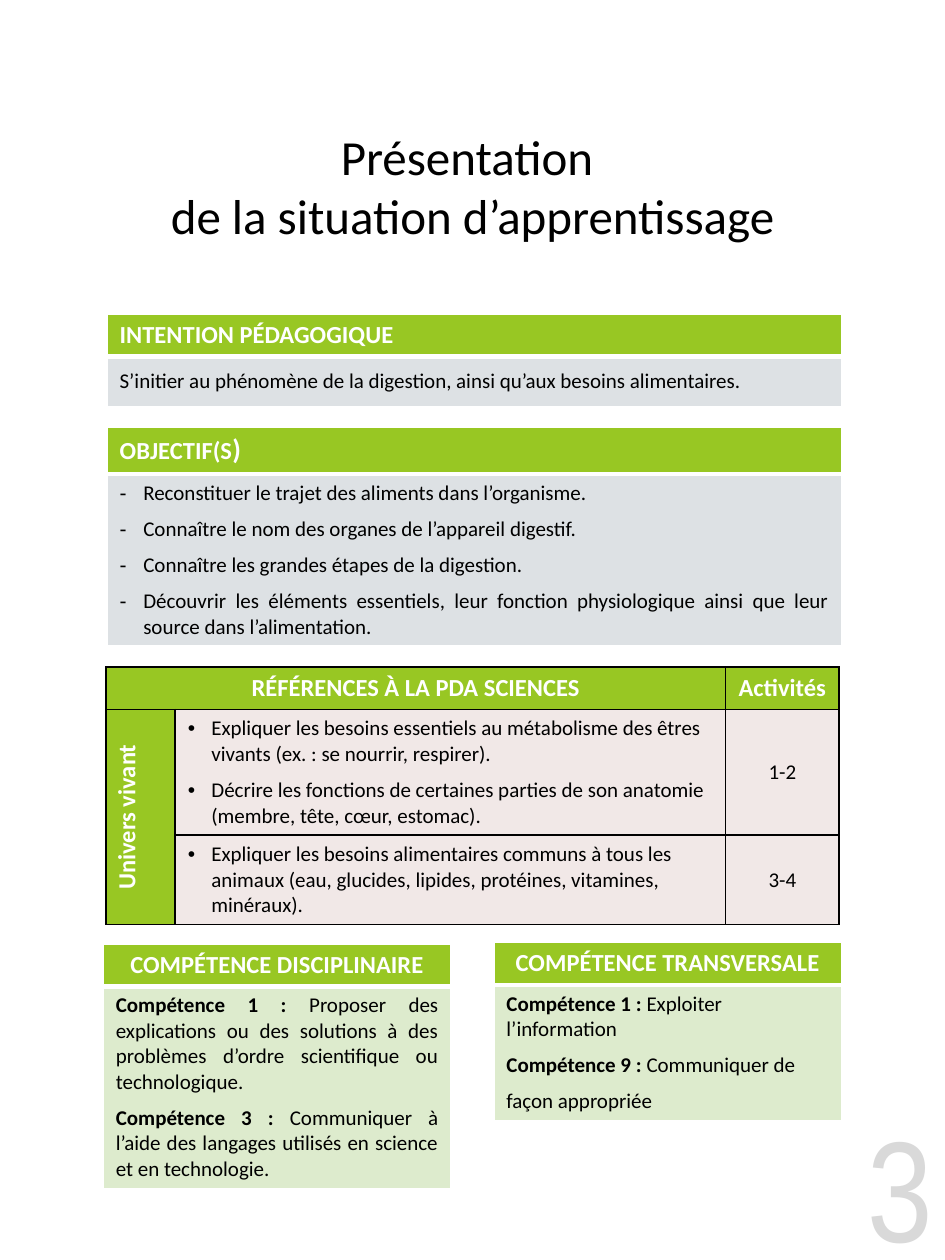
from dataclasses import dataclass

from lxml import etree
from pptx import Presentation
from pptx.dml.color import RGBColor
from pptx.enum.text import MSO_ANCHOR, MSO_AUTO_SIZE, PP_ALIGN
from pptx.oxml.ns import qn
from pptx.util import Pt

LEFT, CENTER, RIGHT, JUSTIFY = PP_ALIGN.LEFT, PP_ALIGN.CENTER, PP_ALIGN.RIGHT, PP_ALIGN.JUSTIFY
TOP, MIDDLE = MSO_ANCHOR.TOP, MSO_ANCHOR.MIDDLE
FONT = "Calibri"
BLACK, WHITE, GREEN = "000000", "FFFFFF", "98C723"
GRAY, PINK, PALE_GREEN, NUMBER_GRAY = "DDE1E4", "F1E8E7", "DDEBCD", "D9D9D9"
HANGING = 13.5


@dataclass
class Span:
    text: str
    size: float = 12
    bold: bool = False
    color: str = BLACK
    font: str = FONT


@dataclass
class Para:
    spans: list[Span]
    align: PP_ALIGN = LEFT
    bullet: str = ""
    before: float = 0
    after: float = 0


@dataclass
class Panel:
    """A heading row over a body row."""
    left: float
    top: float
    width: float
    heights: tuple[float, float]
    heading: Para
    body: list[Para]
    fill: str
    anchor: MSO_ANCHOR = TOP


def rgb(color: str) -> RGBColor:
    return RGBColor.from_string(color)


def heading(text: str, align: PP_ALIGN = LEFT, after: float = 0) -> Para:
    return Para([Span(text, 14, True, WHITE)], align, after=after)


def plain(text: str, align: PP_ALIGN = LEFT, after: float = 0) -> Para:
    return Para([Span(text)], align, after=after)


def bullets(mark: str, align: PP_ALIGN, texts: list[str]) -> list[Para]:
    return [Para([Span(text)], align, mark, 6 if index else 0)
            for index, text in enumerate(texts)]


def skill(number: int, text: str, align: PP_ALIGN) -> Para:
    return Para([Span(f"Compétence {number} : ", bold=True), Span(text)], align, after=6)


def write(frame, paras: list[Para]) -> None:
    for index, item in enumerate(paras):
        para = frame.paragraphs[0] if index == 0 else frame.add_paragraph()
        para.alignment = item.align
        para.space_before, para.space_after = Pt(item.before), Pt(item.after)
        if item.bullet:
            props = para._p.get_or_add_pPr()
            props.set("marL", str(Pt(HANGING)))
            props.set("indent", str(-Pt(HANGING)))
            etree.SubElement(props, qn("a:buFont"), typeface="Arial")
            etree.SubElement(props, qn("a:buChar"), char=item.bullet)
        for span in item.spans:
            run = para.add_run()
            run.text = span.text
            run.font.name, run.font.size, run.font.bold = span.font, Pt(span.size), span.bold
            run.font.color.rgb = rgb(span.color)


def set_borders(cell, color: str, bottom: float = 1) -> None:
    props = cell._tc.get_or_add_tcPr()
    for side, width in (("L", 1), ("R", 1), ("T", 1), ("B", bottom)):
        line = etree.SubElement(props, qn(f"a:ln{side}"), w=str(Pt(width)))
        fill = etree.SubElement(line, qn("a:solidFill"))
        etree.SubElement(fill, qn("a:srgbClr"), val=color)


def fill_cell(cell, paras: list[Para], color: str, anchor: MSO_ANCHOR) -> None:
    cell.fill.solid()
    cell.fill.fore_color.rgb = rgb(color)
    cell.vertical_anchor = anchor
    write(cell.text_frame, paras)


def add_grid(page, left: float, top: float, widths: list[float], heights: list[float]):
    table = page.shapes.add_table(len(heights), len(widths), Pt(left), Pt(top),
                                  Pt(sum(widths)), Pt(sum(heights))).table
    table.first_row = table.horz_banding = False
    for column, width in zip(table.columns, widths):
        column.width = Pt(width)
    for row, height in zip(table.rows, heights):
        row.height = Pt(height)
    return table


def add_panel(page, panel: Panel) -> None:
    table = add_grid(page, panel.left, panel.top, [panel.width], list(panel.heights))
    head, body = table.cell(0, 0), table.cell(1, 0)
    set_borders(head, WHITE, bottom=3)
    set_borders(body, WHITE)
    fill_cell(head, [panel.heading], GREEN, panel.anchor)
    fill_cell(body, panel.body, panel.fill, panel.anchor)


def add_references(page) -> None:
    table = add_grid(page, 60.5, 381, [39.6, 314.6, 64.8], [24.5, 71.2, 50.4])
    for cell in table.iter_cells():
        set_borders(cell, BLACK)
    table.cell(0, 0).merge(table.cell(0, 1))
    table.cell(1, 0).merge(table.cell(2, 0))
    fill_cell(table.cell(0, 0), [heading("RÉFÉRENCES À LA PDA SCIENCES", CENTER)], GREEN, MIDDLE)
    fill_cell(table.cell(0, 2), [heading("Activités", CENTER)], GREEN, MIDDLE)
    fill_cell(table.cell(1, 0), [heading("Univers vivant", CENTER)], GREEN, MIDDLE)
    table.cell(1, 0)._tc.get_or_add_tcPr().set("vert", "vert270")
    rows = [
        (["Expliquer les besoins essentiels au métabolisme des êtres vivants "
          "(ex. : se nourrir, respirer).",
          "Décrire les fonctions de certaines parties de son anatomie "
          "(membre, tête, cœur, estomac)."], "1-2"),
        (["Expliquer les besoins alimentaires communs à tous les animaux "
          "(eau, glucides, lipides, protéines, vitamines, minéraux)."], "3-4"),
    ]
    for row, (texts, activities) in enumerate(rows, start=1):
        fill_cell(table.cell(row, 1), bullets("•", LEFT, texts), PINK, TOP)
        fill_cell(table.cell(row, 2), [plain(activities, CENTER)], PINK, MIDDLE)


PANELS = [
    Panel(61.2, 179.3, 419.8, (23.8, 28.8), heading("INTENTION PÉDAGOGIQUE"),
          [plain("S’initier au phénomène de la digestion, ainsi qu’aux besoins alimentaires.",
                 JUSTIFY)], GRAY, MIDDLE),
    Panel(61.2, 244, 419.8, (26.7, 97),
          Para([Span("OBJECTIF(S", 14, True, WHITE), Span(")", 16, True, WHITE)]),
          bullets("-", JUSTIFY, [
              "Reconstituer le trajet des aliments dans l’organisme.",
              "Connaître le nom des organes de l’appareil digestif.",
              "Connaître les grandes étapes de la digestion.",
              "Découvrir les éléments essentiels, leur fonction physiologique ainsi que "
              "leur source dans l’alimentation."]), GRAY),
    Panel(282.2, 538.5, 198.7, (24.2, 76.6), heading("COMPÉTENCE TRANSVERSALE", CENTER, 6),
          [skill(1, "Exploiter l’information", LEFT),
           skill(9, "Communiquer de", LEFT),
           plain("façon appropriée", after=6)], PALE_GREEN),
    Panel(59, 539.3, 198.7, (24.2, 114), heading("COMPÉTENCE DISCIPLINAIRE", CENTER, 6),
          [skill(1, "Proposer des explications ou des solutions à des problèmes d’ordre "
                    "scientifique ou technologique.", JUSTIFY),
           skill(3, "Communiquer à l’aide des langages utilisés en science et en "
                    "technologie.", JUSTIFY)], PALE_GREEN),
]


def main() -> None:
    deck = Presentation()
    deck.slide_width, deck.slide_height = Pt(540), Pt(720)
    page = deck.slides.add_slide(deck.slide_layouts[5])

    # Title
    title = page.shapes.title
    title.left, title.top, title.width, title.height = Pt(0), Pt(33), Pt(540), Pt(146)
    title.text_frame.auto_size = MSO_AUTO_SIZE.NONE
    title.text_frame.vertical_anchor = MIDDLE
    write(title.text_frame, [Para([Span(text, 28)], CENTER) for text in
                             ("Présentation ", "de la situation d’apprentissage")])

    # Tables
    for panel in PANELS:
        add_panel(page, panel)
    add_references(page)

    # Page number
    box = page.shapes.add_textbox(Pt(452), Pt(633), Pt(88), Pt(89))
    box.text_frame.word_wrap = True
    box.text_frame.vertical_anchor = MIDDLE
    write(box.text_frame, [Para([Span("3", 82, False, NUMBER_GRAY, "Arial Narrow")], RIGHT)])

    deck.save("out.pptx")


if __name__ == "__main__":
    main()
